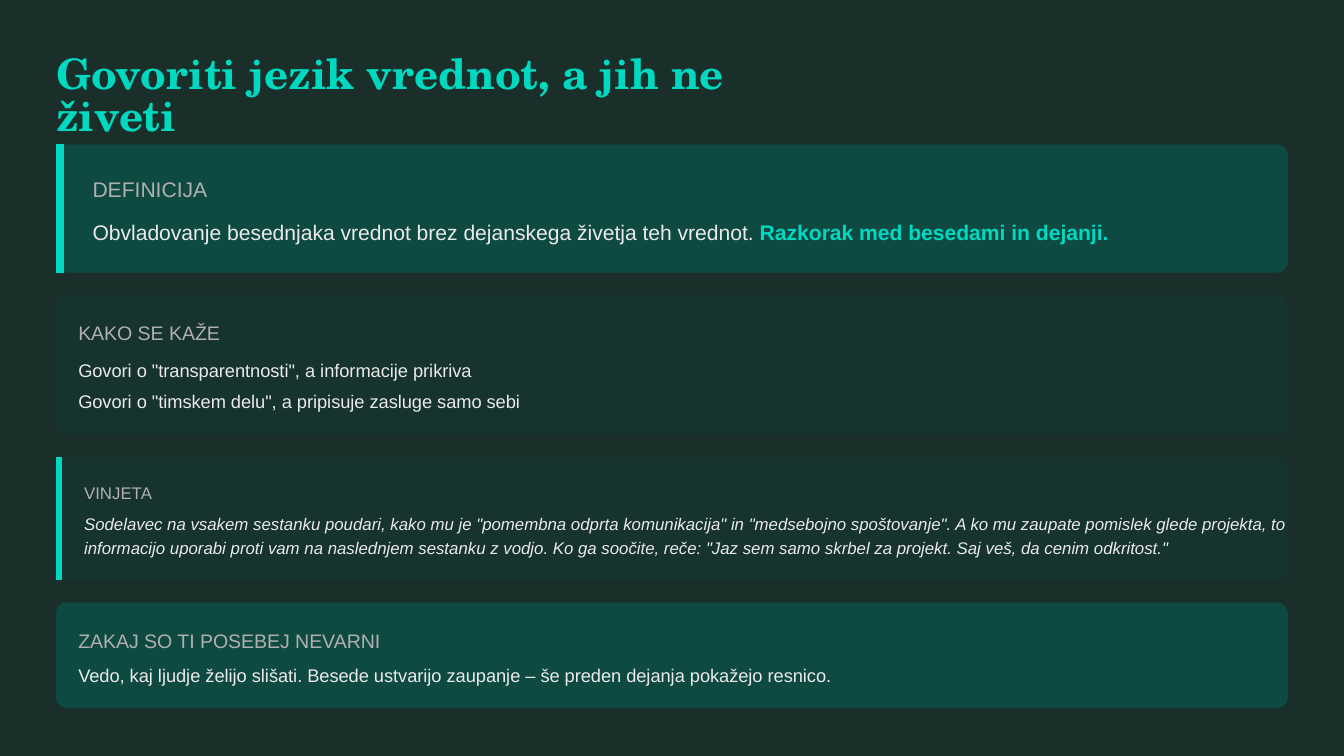
from dataclasses import dataclass, field

from lxml.etree import SubElement
from pptx import Presentation
from pptx.dml.color import RGBColor as Rgb
from pptx.enum.shapes import MSO_CONNECTOR as Link, MSO_SHAPE as Shape
from pptx.oxml.ns import qn
from pptx.util import Cm, Pt


@dataclass(frozen=True)
class Theme:
    back: Rgb = Rgb(0x1A, 0x2E, 0x2A)
    strong: Rgb = Rgb(0x0F, 0x4A, 0x42)
    quiet: Rgb = Rgb(0x16, 0x33, 0x2E)
    accent: Rgb = Rgb(0x00, 0xD9, 0xC0)
    label: Rgb = Rgb(0xB0, 0xB0, 0xB0)
    body: Rgb = Rgb(0xEA, 0xEA, 0xEA)
    serif: str = "TeX Gyre Schola"
    sans: str = "Arial"
    title: float = 22.5
    lead: float = 11.25
    head: float = 10.5
    text: float = 9.75
    small: float = 9


T = Theme()


@dataclass
class Line:
    text: str
    size: float
    lead: float
    after: float = 0
    color: Rgb = T.body
    font: str = T.sans
    bold: bool = False
    italic: bool = False
    rows: int = 1
    strong: str = ""

    @property
    def height(self):
        return Pt(self.lead * self.rows)

    @property
    def step(self):
        return self.height + Pt(self.after)


@dataclass
class Card:
    fill: Rgb
    lines: list = field(default_factory=list)
    pad: int = Cm(0.42)
    indent: int = Cm(0.42)
    bar: float = 0

    @property
    def height(self):
        return 2 * self.pad + sum(line.step for line in self.lines)


def add_line(slide, left, top, width, line):
    frame = slide.shapes.add_textbox(left, top, width, line.height).text_frame
    frame.word_wrap = True
    frame.margin_left = frame.margin_right = 0
    frame.margin_top = frame.margin_bottom = 0
    para = frame.paragraphs[0]
    para.line_spacing = Pt(line.lead)
    para.space_after = Pt(line.after)
    font = para.font
    font.name, font.size = line.font, Pt(line.size)
    font.bold, font.italic = line.bold, line.italic
    font.color.rgb = line.color
    para.add_run().text = line.text
    if line.strong:
        run = para.add_run()
        run.text = line.strong
        run.font.bold = True
        run.font.color.rgb = T.accent


def add_bar(slide, left, top, height, weight):
    mid = left + Pt(weight) // 2
    bar = slide.shapes.add_connector(Link.STRAIGHT, mid, top, mid, top + height)
    bar.line.color.rgb = T.accent
    bar.line.width = Pt(weight)
    SubElement(bar._element.spPr, qn("a:effectLst"))


def add_card(slide, left, top, width, card):
    panel = slide.shapes.add_shape(
        Shape.ROUNDED_RECTANGLE, left, top, width, card.height)
    panel.adjustments[0] = Cm(0.21) / card.height
    panel.shadow.inherit = False
    panel.fill.solid()
    panel.fill.fore_color.rgb = card.fill
    panel.line.fill.background()
    if card.bar:
        add_bar(slide, left, top, card.height, card.bar)
    y = top + card.pad
    for line in card.lines:
        add_line(slide, left + card.indent, y, width - card.indent, line)
        y += line.step


def add_stack(slide, left, top, width, gap, cards):
    for card in cards:
        add_card(slide, left, top, width, card)
        top += card.height + gap


TITLE = Line("Govoriti jezik vrednot, a jih ne živeti", T.title, 22.5, 18,
             T.accent, T.serif, bold=True)
CARDS = [
    Card(T.strong, [
        Line("DEFINICIJA", T.lead, 15.75, 6, T.label),
        Line("Obvladovanje besednjaka vrednot brez dejanskega živetja "
             "teh vrednot. ", T.lead, 16.9,
             strong="Razkorak med besedami in dejanji."),
    ], pad=Cm(0.53), indent=Cm(0.69), bar=4.5),
    Card(T.quiet, [
        Line("KAKO SE KAŽE", T.head, 14.7, 6, T.label),
        Line('Govori o "transparentnosti", a informacije prikriva',
             T.text, 13.65, 3),
        Line('Govori o "timskem delu", a pripisuje zasluge samo sebi',
             T.text, 13.65),
    ]),
    Card(T.quiet, [
        Line("VINJETA", T.small, 12.6, 4.5, T.label),
        Line('Sodelavec na vsakem sestanku poudari, kako mu je "pomembna '
             'odprta komunikacija" in "medsebojno spoštovanje". A ko mu '
             'zaupate pomislek glede projekta, to informacijo uporabi proti '
             'vam na naslednjem sestanku z vodjo. Ko ga soočite, reče: "Jaz '
             'sem samo skrbel za projekt. Saj veš, da cenim odkritost."',
             T.small, 12.6, italic=True, rows=2),
    ], indent=Cm(0.53), bar=3),
    Card(T.strong, [
        Line("ZAKAJ SO TI POSEBEJ NEVARNI", T.head, 14.7, 4.5, T.label),
        Line("Vedo, kaj ljudje želijo slišati. Besede ustvarijo zaupanje – "
             "še preden dejanja pokažejo resnico.", T.text, 13.65),
    ]),
]


def main():
    deck = Presentation()
    deck.slide_width, deck.slide_height = Cm(25.4), Cm(14.29)
    slide = deck.slides.add_slide(deck.slide_layouts[6])
    slide.background.fill.solid()
    slide.background.fill.fore_color.rgb = T.back
    edge = Cm(1.06)
    add_line(slide, edge, edge, Cm(12.7), TITLE)
    add_stack(slide, edge, Cm(2.73), deck.slide_width - 2 * edge, Cm(0.42),
              CARDS)
    deck.save("out.pptx")


if __name__ == "__main__":
    main()
